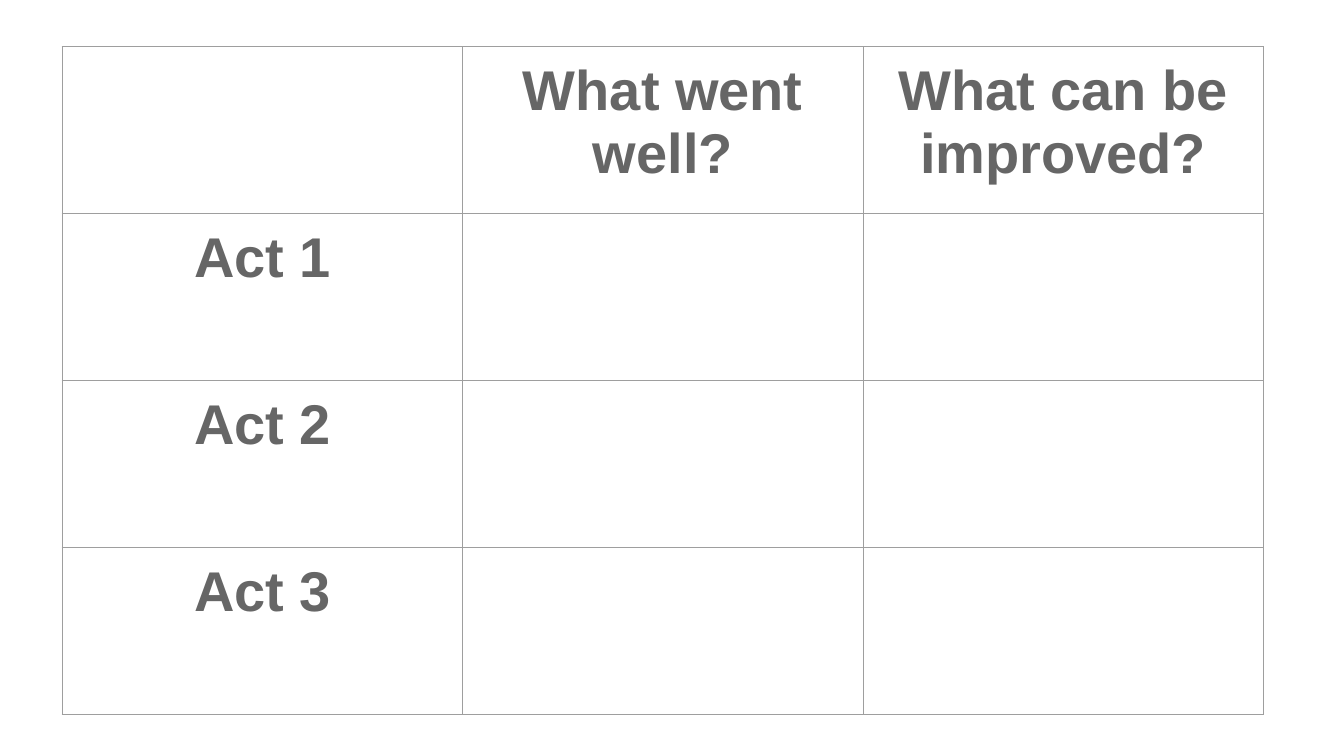
from dataclasses import dataclass

from lxml.etree import SubElement
from pptx import Presentation
from pptx.dml.color import RGBColor
from pptx.enum.text import MSO_ANCHOR, PP_ALIGN
from pptx.oxml.ns import qn
from pptx.slide import Slide
from pptx.table import Table, _Cell
from pptx.util import Pt

WHITE = RGBColor(0xFF, 0xFF, 0xFF)
TEXT_GRAY = RGBColor(0x66, 0x66, 0x66)
BORDER_GRAY = RGBColor(0x9E, 0x9E, 0x9E)

FONT = "Arial"
LABEL_SIZE = Pt(30)
BORDER_WIDTH = Pt(0.75)
CELL_MARGIN = Pt(7.2)


@dataclass(frozen=True)
class Grid:
    left: Pt
    top: Pt
    column_width: Pt
    row_height: Pt
    questions: tuple[str, ...]
    acts: tuple[str, ...]


REVIEW = Grid(
    left=Pt(33.4),
    top=Pt(25),
    column_width=Pt(214.5),
    row_height=Pt(89.5),
    questions=("What went well?", "What can be improved?"),
    acts=("Act 1", "Act 2", "Act 3"),
)


def add_borders(cell: _Cell) -> None:
    properties = cell._tc.get_or_add_tcPr()
    for position, side in enumerate(("a:lnL", "a:lnR", "a:lnT", "a:lnB")):
        border = SubElement(properties, qn(side), w=str(BORDER_WIDTH))
        fill = SubElement(border, qn("a:solidFill"))
        SubElement(fill, qn("a:srgbClr"), val=str(BORDER_GRAY))
        properties.insert(position, border)


def style_cell(cell: _Cell) -> None:
    cell.fill.background()
    cell.vertical_anchor = MSO_ANCHOR.TOP
    cell.margin_left = cell.margin_right = CELL_MARGIN
    cell.margin_top = cell.margin_bottom = CELL_MARGIN
    add_borders(cell)


def write_label(cell: _Cell, label: str) -> None:
    cell.text_frame.text = label
    paragraph = cell.text_frame.paragraphs[0]
    paragraph.alignment = PP_ALIGN.CENTER
    font = paragraph.runs[0].font
    font.name = FONT
    font.size = LABEL_SIZE
    font.bold = True
    font.color.rgb = TEXT_GRAY


def draw_grid(slide: Slide, grid: Grid) -> Table:
    row_count = len(grid.acts) + 1
    column_count = len(grid.questions) + 1
    table = slide.shapes.add_table(
        row_count,
        column_count,
        grid.left,
        grid.top,
        grid.column_width * column_count,
        grid.row_height * row_count,
    ).table
    table.first_row = False
    table.horz_banding = False
    for cell in table.iter_cells():
        style_cell(cell)
    for column, question in enumerate(grid.questions, start=1):
        write_label(table.cell(0, column), question)
    for row, act in enumerate(grid.acts, start=1):
        write_label(table.cell(row, 0), act)
    return table


def main() -> None:
    presentation = Presentation()
    presentation.slide_width = Pt(720)
    presentation.slide_height = Pt(405)
    slide = presentation.slides.add_slide(presentation.slide_layouts[6])
    slide.background.fill.solid()
    slide.background.fill.fore_color.rgb = WHITE
    draw_grid(slide, REVIEW)
    presentation.save("out.pptx")


if __name__ == "__main__":
    main()
